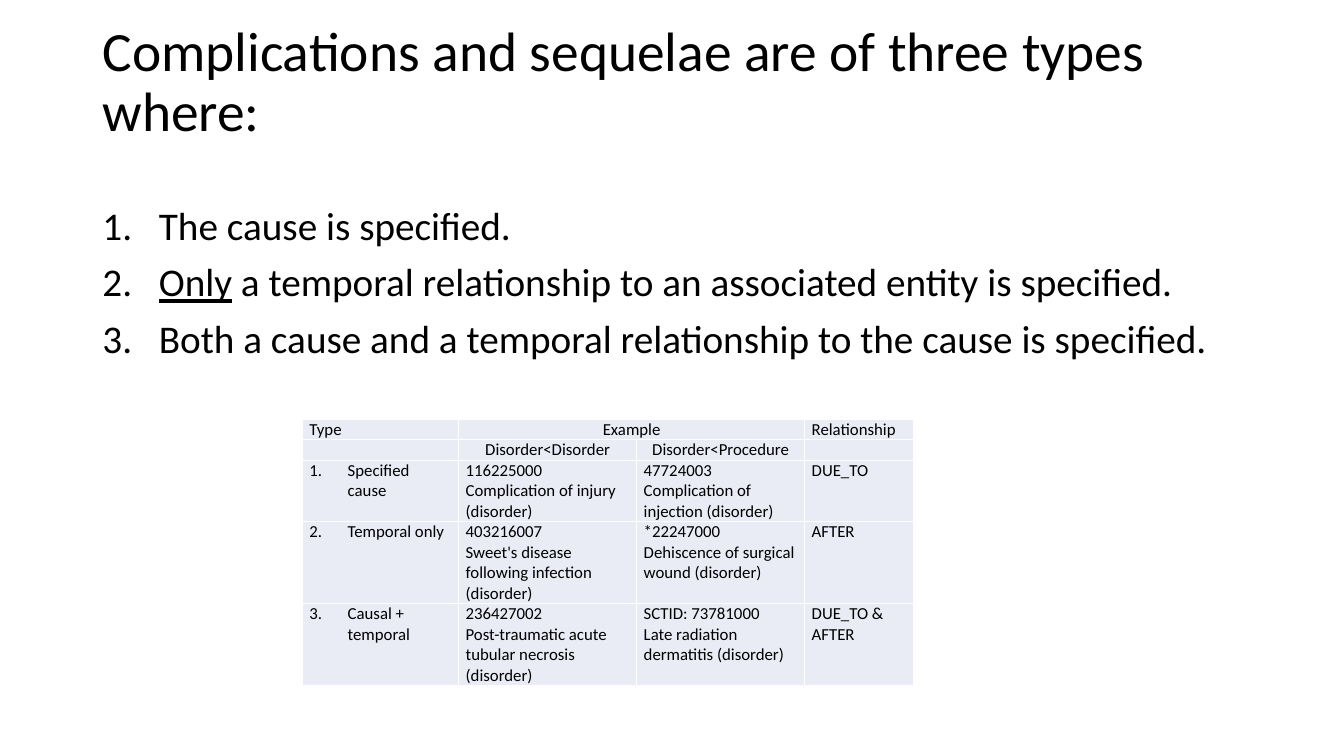
from dataclasses import dataclass

from lxml.etree import SubElement
from pptx import Presentation
from pptx.dml.color import RGBColor
from pptx.enum.text import MSO_ANCHOR, MSO_AUTO_SIZE, PP_ALIGN
from pptx.oxml import parse_xml
from pptx.oxml.ns import nsdecls, qn
from pptx.util import Emu, Inches, Pt

COLORS = {"ink": "000000", "cell": "E9EBF5", "rule": "FFFFFF"}
FONT = "Calibri"
WIDE, HIGH = Inches(13.33), Inches(7.5)
COLS, ROWS = 160, 150  # layout grid


@dataclass(frozen=True)
class Box:
    col: float
    row: float
    cols: float
    rows: float


@dataclass(frozen=True)
class Item:
    lead: str  # underlined opening
    rest: str


@dataclass(frozen=True)
class Cell:
    lines: tuple[str, ...] = ()
    center: bool = False
    number: int = 0
    span: int = 1


@dataclass(frozen=True)
class Row:
    lines: int  # height in text lines
    cells: tuple[Cell, ...]


def across(cols: float) -> Emu:
    return Emu(round(WIDE * cols / COLS))


def down(rows: float) -> Emu:
    return Emu(round(HIGH * rows / ROWS))


def frame(box: Box) -> tuple[Emu, Emu, Emu, Emu]:
    return across(box.col), down(box.row), across(box.cols), down(box.rows)


def color(name: str) -> RGBColor:
    return RGBColor.from_string(COLORS[name])


def place(shape, box: Box) -> None:
    shape.left, shape.top, shape.width, shape.height = frame(box)
    shape.text_frame.word_wrap = True
    shape.text_frame.auto_size = MSO_AUTO_SIZE.NONE


def write(para, text: str, size: float, under: bool = False) -> None:
    run = para.add_run()
    run.text = text
    run.font.name, run.font.size = FONT, Pt(size)
    run.font.underline = under
    run.font.color.rgb = color("ink")


def number(para, start: int, indent: float) -> None:
    props = para._p.get_or_add_pPr()
    props.set("marL", str(Inches(indent)))
    props.set("indent", str(-Inches(indent)))
    mark = SubElement(props, qn("a:buAutoNum"), type="arabicPeriod")
    if start > 1:
        mark.set("startAt", str(start))


def border(cell) -> None:
    props = cell._tc.get_or_add_tcPr()
    for spot, side in enumerate("LRTB"):
        props.insert(spot, parse_xml(
            f'<a:ln{side} {nsdecls("a")} w="{Pt(1)}"><a:solidFill>'
            f'<a:srgbClr val="{COLORS["rule"]}"/></a:solidFill></a:ln{side}>'))


def fill(cell, data: Cell) -> None:
    cell.margin_left = cell.margin_right = Inches(0.07)
    cell.margin_top = cell.margin_bottom = 0
    cell.fill.solid()
    cell.fill.fore_color.rgb = color("cell")
    border(cell)
    text = cell.text_frame
    for spot, line in enumerate(data.lines):
        para = text.add_paragraph() if spot else text.paragraphs[0]
        para.alignment = PP_ALIGN.CENTER if data.center else PP_ALIGN.LEFT
        if data.number:
            number(para, data.number, 0.38)
        write(para, line, 12)
    if not data.lines:  # keep an empty cell one line high
        SubElement(text.paragraphs[0]._p, qn("a:endParaRPr"), sz="1200")


def draw_title(shape, text: str) -> None:
    place(shape, Box(11, 8, 138, 29))
    shape.text_frame.vertical_anchor = MSO_ANCHOR.MIDDLE
    shape.text_frame.margin_bottom = Inches(0.65)
    para = shape.text_frame.paragraphs[0]
    para.alignment, para.line_spacing = PP_ALIGN.LEFT, 0.9
    write(para, text, 39.6)


def draw_list(shape, items: tuple[Item, ...]) -> None:
    place(shape, Box(11, 40, 138, 95))
    text = shape.text_frame
    for spot, item in enumerate(items):
        para = text.add_paragraph() if spot else text.paragraphs[0]
        para.line_spacing, para.space_before = 0.9, Pt(10)
        number(para, 1, 0.56)
        if item.lead:
            write(para, item.lead, 28, under=True)
        write(para, item.rest, 28)


def draw_table(slide, rows: tuple[Row, ...], widths: tuple[float, ...]) -> None:
    step = 4  # grid rows per text line
    box = Box(36, 83.2, sum(widths), step * sum(row.lines for row in rows))
    table = slide.shapes.add_table(len(rows), len(widths), *frame(box)).table
    table.first_row = table.horz_banding = False
    for col, width in zip(table.columns, widths):
        col.width = across(width)
    for down_at, row in enumerate(rows):
        table.rows[down_at].height = down(step * row.lines)
        at = 0
        for data in row.cells:
            cell = table.cell(down_at, at)
            fill(cell, data)
            for extra in range(at + 1, at + data.span):
                fill(table.cell(down_at, extra), Cell())
            if data.span > 1:
                cell.merge(table.cell(down_at, at + data.span - 1))
            at += data.span


ITEMS = (
    Item("", "The cause is specified."),
    Item("Only", " a temporal relationship to an associated entity is specified."),
    Item("", "Both a cause and a temporal relationship to the cause is specified."),
)

TABLE = (
    Row(1, (Cell(("Type",)), Cell(("Example",), center=True, span=2),
            Cell(("Relationship",)))),
    Row(1, (Cell(), Cell(("Disorder<Disorder",), center=True),
            Cell(("Disorder<Procedure",), center=True), Cell())),
    Row(3, (Cell(("Specified cause",), number=1),
            Cell(("116225000 Complication of injury (disorder)",)),
            Cell(("47724003", "Complication of injection (disorder)")),
            Cell(("DUE_TO",)))),
    Row(4, (Cell(("Temporal only",), number=2),
            Cell(("403216007", "Sweet's disease following infection (disorder)")),
            Cell(("*22247000 Dehiscence of surgical wound (disorder)",)),
            Cell(("AFTER",)))),
    Row(4, (Cell(("Causal + temporal",), number=3),
            Cell(("236427002", "Post-traumatic acute tubular necrosis (disorder)")),
            Cell(("SCTID: 73781000", "Late radiation dermatitis (disorder)")),
            Cell(("DUE_TO & AFTER",)))),
)


def main() -> None:
    deck = Presentation()
    deck.slide_width, deck.slide_height = WIDE, HIGH
    slide = deck.slides.add_slide(deck.slide_layouts[1])
    # Title and numbered list
    draw_title(slide.shapes.title,
               "Complications and sequelae are of three types where:")
    draw_list(slide.placeholders[1], ITEMS)
    # Table of examples
    draw_table(slide, TABLE, (18.6, 21.2, 20, 13))
    deck.save("out.pptx")


if __name__ == "__main__":
    main()
